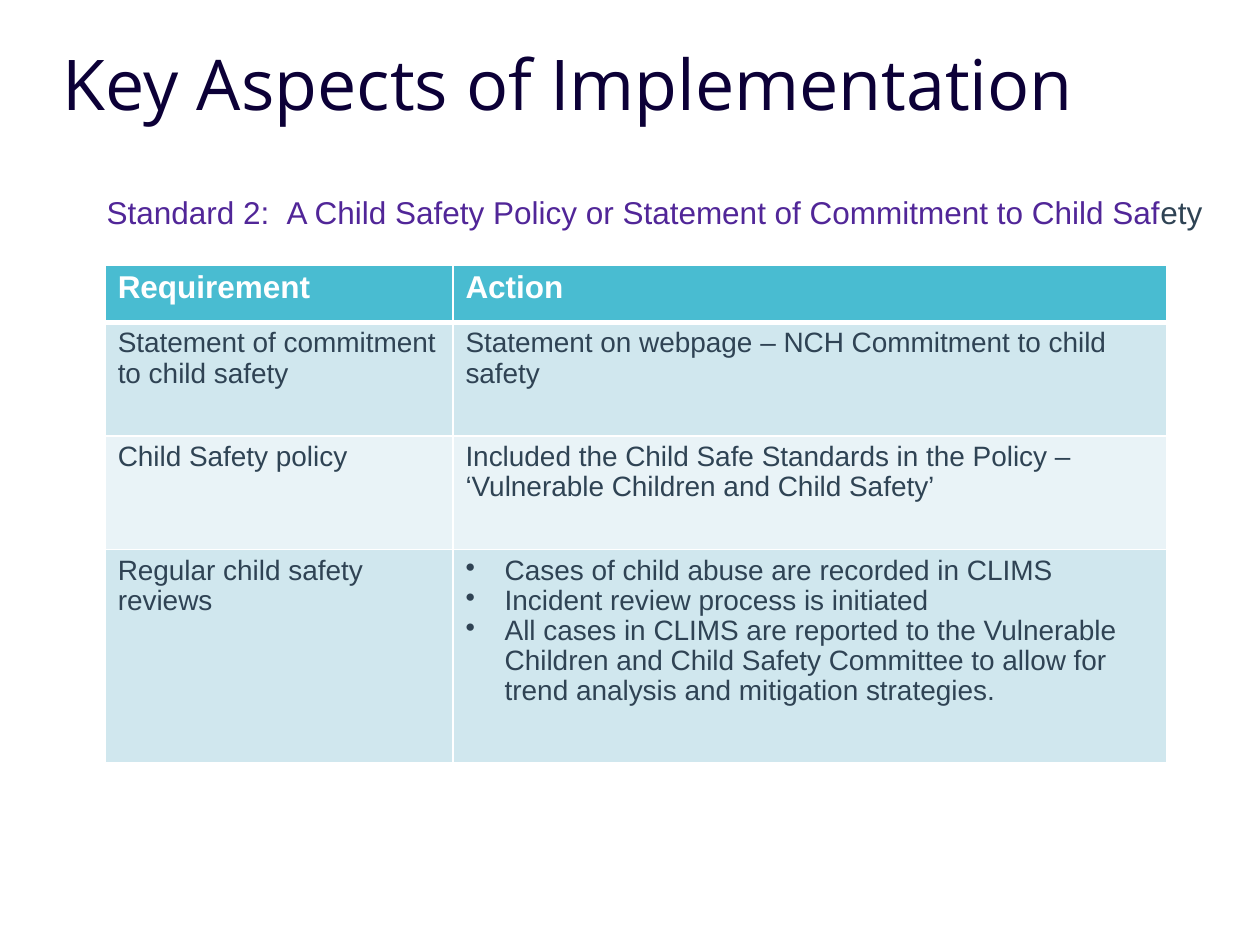
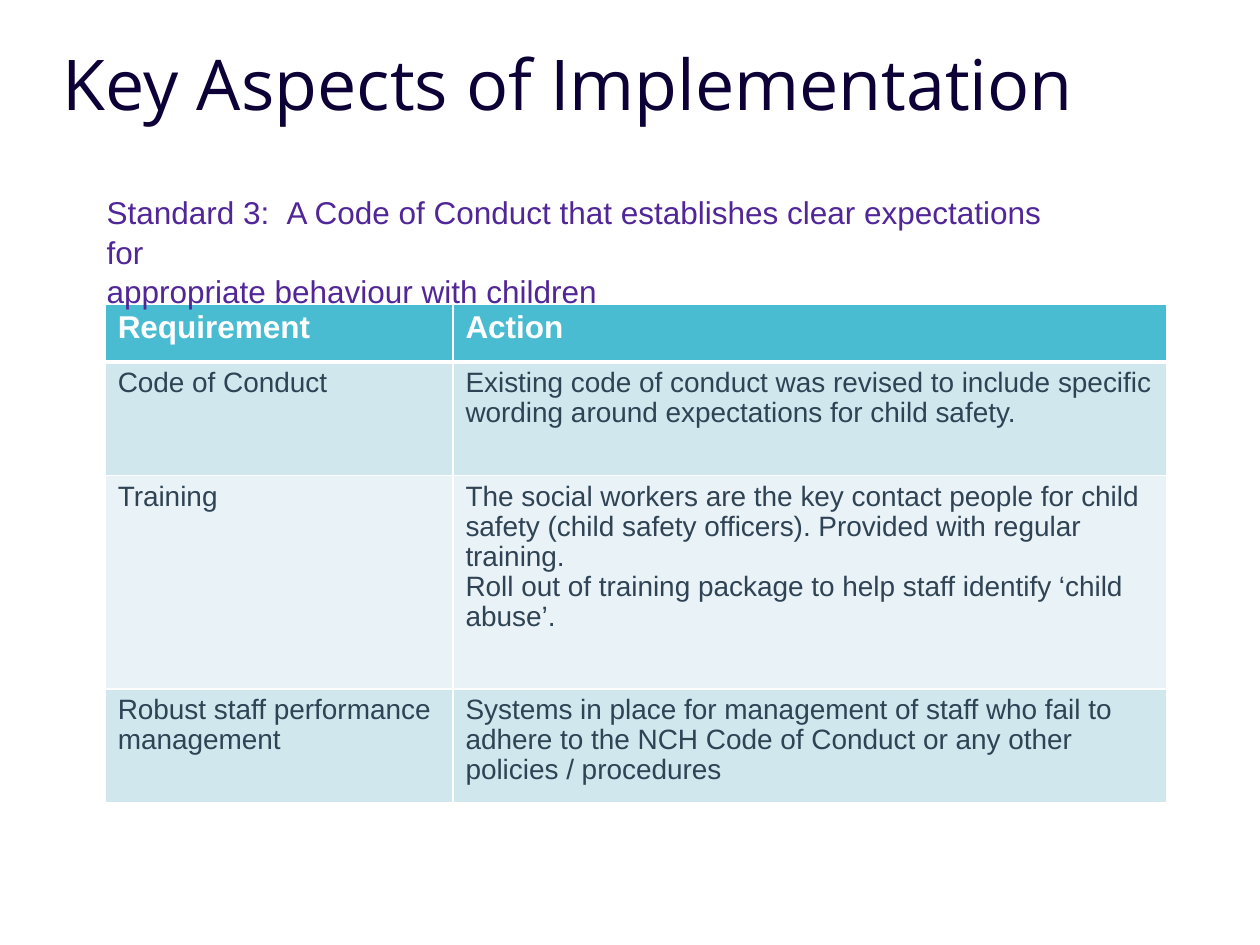
"""Build two slides on implementing the child safety standards."""
import lxml.etree
import pptx
import pptx.dml.color
import pptx.enum.text
import pptx.oxml.ns
import pptx.util

Cm = pptx.util.Cm
qn = pptx.oxml.ns.qn

TITLE_COLOUR = "0C0037"
STANDARD_COLOUR = "512698"
BODY_COLOUR = "2F4354"
WHITE = "FFFFFF"
HEADER_FILL = "49BCD1"
ROW_FILLS = ["D0E7EE", "E9F3F7"]
COLUMN_WIDTHS = [7.01, 14.4]
HEADER = ("Requirement", ["Action"])
HEADER_HEIGHT = 1.16

SLIDES = [
    {
        "standard": [[("Standard 2:\tA Child Safety Policy or Statement of Commitment to Child Saf", STANDARD_COLOUR),
                      ("ety", BODY_COLOUR)]],
        "standard_width": 22.75,
        "table_top": 5.34,
        "row_heights": [2.29, 2.29, 4.3],
        "bulleted_row": 3,
        "rows": [
            ("Statement of commitment to child safety",
             ["Statement on webpage – NCH Commitment to child safety"]),
            ("Child Safety policy",
             ["Included the Child Safe Standards in the Policy – ‘Vulnerable Children and Child Safety’"]),
            ("Regular child safety reviews",
             ["Cases of child abuse are recorded in CLIMS",
              "Incident review process is initiated",
              "All cases in CLIMS are reported to the Vulnerable Children and Child Safety Committee "
              "to allow for trend analysis and mitigation strategies."]),
        ],
    },
    {
        "standard": [[("Standard 3:\tA Code of Conduct that establishes clear expectations for", STANDARD_COLOUR)],
                     [("appropriate behaviour with children", STANDARD_COLOUR)]],
        "standard_width": 20.2,
        "table_top": 6.14,
        "row_heights": [2.29, 4.3, 2.29],
        "bulleted_row": None,
        "rows": [
            ("Code of Conduct",
             ["Existing code of conduct was revised to include specific wording around expectations "
              "for child safety."]),
            ("Training",
             ["The social workers are the key contact people for child safety (child safety officers). "
              "Provided with regular training.",
              "Roll out of training package to help staff identify ‘child abuse’."]),
            ("Robust staff performance management",
             ["Systems in place for management of staff who fail to adhere to the NCH Code of Conduct "
              "or any other policies / procedures"]),
        ],
    },
]


def colour(hex_string):
    return pptx.dml.color.RGBColor.from_string(hex_string)


def add_run(paragraph, text, size, hex_string, name="Arial", bold=False):
    run = paragraph.add_run()
    run.text = text
    run.font.size = pptx.util.Pt(size)
    run.font.name = name
    run.font.bold = bold
    run.font.color.rgb = colour(hex_string)


presentation = pptx.Presentation()
presentation.slide_width = Cm(25.4)
presentation.slide_height = Cm(19.05)

for content in SLIDES:
    slide = presentation.slides.add_slide(presentation.slide_layouts[6])

    rows = [HEADER] + content["rows"]
    heights = [HEADER_HEIGHT] + content["row_heights"]
    table = slide.shapes.add_table(len(rows), len(COLUMN_WIDTHS), Cm(2.12), Cm(content["table_top"]),
                                   Cm(sum(COLUMN_WIDTHS)), Cm(sum(heights))).table
    table.horz_banding = False
    for column, width in zip(table.columns, COLUMN_WIDTHS):
        column.width = Cm(width)

    for row_index, (requirement, actions) in enumerate(rows):
        table.rows[row_index].height = Cm(heights[row_index])
        is_header = row_index == 0
        for column_index, texts in enumerate([[requirement], actions]):
            cell = table.cell(row_index, column_index)
            properties = cell._tc.get_or_add_tcPr()
            for side in ["lnL", "lnR", "lnT", "lnB"]:
                under_header = (row_index, side) in [(0, "lnB"), (1, "lnT")]
                border = lxml.etree.SubElement(properties, qn("a:" + side))
                border.set("w", str(pptx.util.Pt(3 if under_header else 1)))
                line_fill = lxml.etree.SubElement(border, qn("a:solidFill"))
                lxml.etree.SubElement(line_fill, qn("a:srgbClr")).set("val", WHITE)
            cell.fill.solid()
            cell.fill.fore_color.rgb = colour(HEADER_FILL if is_header else ROW_FILLS[(row_index - 1) % 2])

            for text_index, text in enumerate(texts):
                frame = cell.text_frame
                paragraph = frame.add_paragraph() if text_index else frame.paragraphs[0]
                if column_index == 1 and row_index == content["bulleted_row"]:
                    paragraph_properties = paragraph._p.get_or_add_pPr()
                    paragraph_properties.set("marL", str(Cm(0.79)))
                    paragraph_properties.set("indent", str(-Cm(0.79)))
                    lxml.etree.SubElement(paragraph_properties, qn("a:buChar")).set("char", "•")
                paragraph.line_spacing = 0.97
                add_run(paragraph, text, 18 if is_header else 16,
                        WHITE if is_header else BODY_COLOUR, bold=is_header)

    title = slide.shapes.add_textbox(Cm(1.27), Cm(0.94), Cm(20.78), Cm(2.39)).text_frame
    title.word_wrap = True
    title.margin_left = title.margin_right = title.margin_top = title.margin_bottom = 0
    title.vertical_anchor = pptx.enum.text.MSO_ANCHOR.TOP
    title.paragraphs[0].line_spacing = 0.95
    add_run(title.paragraphs[0], "Key Aspects of Implementation", 40, TITLE_COLOUR, "Open Sans")

    standard = slide.shapes.add_textbox(Cm(1.9), Cm(3.73), Cm(content["standard_width"]), Cm(1.8)).text_frame
    standard.word_wrap = True
    for paragraph_index, runs in enumerate(content["standard"]):
        paragraph = standard.add_paragraph() if paragraph_index else standard.paragraphs[0]
        tabs = lxml.etree.SubElement(paragraph._p.get_or_add_pPr(), qn("a:tabLst"))
        lxml.etree.SubElement(tabs, qn("a:tab"), pos=str(Cm(3.63)), algn="l")
        paragraph.line_spacing = 1.05
        for text, hex_string in runs:
            add_run(paragraph, text, 18, hex_string)

presentation.save("out.pptx")
